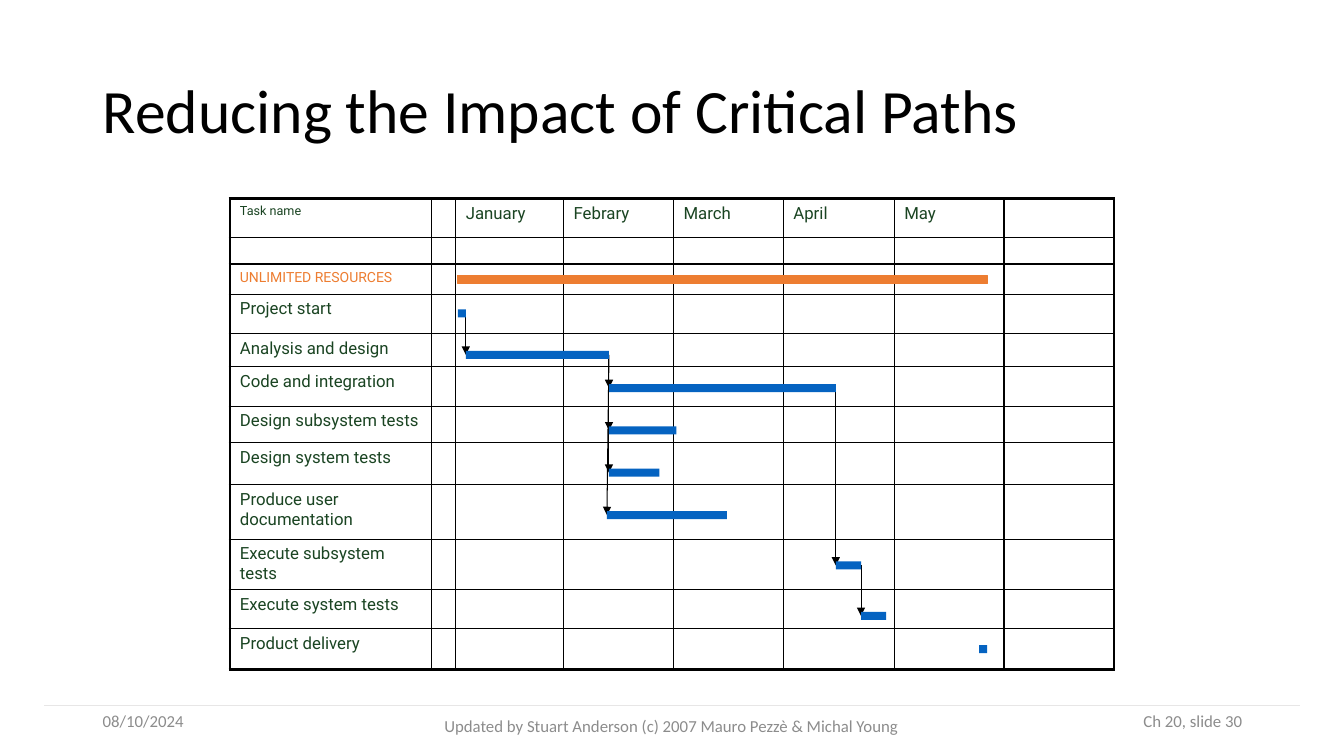
from lxml.etree import SubElement
from pptx import Presentation
from pptx.dml.color import RGBColor
from pptx.enum.shapes import MSO_CONNECTOR, MSO_SHAPE
from pptx.enum.text import MSO_ANCHOR, PP_ALIGN
from pptx.oxml.ns import qn
from pptx.util import Inches, Pt

BLACK, GREEN, ORANGE, BLUE = "000000", "1A4422", "ED7D31", "0563C1"
GREY, PALE = "8C8C8C", "E7E6E6"

TITLE = "Reducing the Impact of Critical Paths"
FOOTERS = [  # text, left, top, width, alignment
    ("08/10/2024", 0.92, 6.95, 1.97, PP_ALIGN.LEFT),
    ("Updated by Stuart Anderson (c) 2007 Mauro Pezzè & Michal Young", 4.16, 7, 5, PP_ALIGN.CENTER),
    ("Ch 20, slide 30", 10.29, 6.95, 2.13, PP_ALIGN.RIGHT),
]
HEADINGS = ["Task name", "", "January", "Febrary", "March", "April", "May", ""]
COLUMN_WIDTHS = [2, 0.24, 1.07, 1.09, 1.09, 1.1, 1.09, 1.09]
HEADER_HEIGHTS = [0.39, 0.26]
TASKS = [  # name, row height, bar start, bar end, bar middle
    ("UNLIMITED RESOURCES", 0.3, 4.54, 9.79, 2.77),
    ("Project start", 0.39, 4.54, 4.62, 3.11),
    ("Analysis and design", 0.33, 4.62, 6.04, 3.52),
    ("Code and integration", 0.39, 6.04, 8.29, 3.85),
    ("Design subsystem tests", 0.36, 6.04, 6.71, 4.27),
    ("Design system tests", 0.42, 6.04, 6.54, 4.69),
    ("Produce user documentation", 0.54, 6.02, 7.21, 5.11),
    ("Execute subsystem tests", 0.49, 8.29, 8.54, 5.61),
    ("Execute system tests", 0.39, 8.54, 8.79, 6.11),
    ("Product delivery", 0.4, 9.71, 9.79, 6.44),
]
SUMMARY = TASKS[0][0]
DEPENDENCIES = [
    ("Project start", "Analysis and design"),
    ("Analysis and design", "Code and integration"),
    ("Analysis and design", "Design subsystem tests"),
    ("Analysis and design", "Design system tests"),
    ("Analysis and design", "Produce user documentation"),
    ("Code and integration", "Execute subsystem tests"),
    ("Execute subsystem tests", "Execute system tests"),
]
TABLE_LEFT, TABLE_TOP = 2.28, 1.97
BAR_HEIGHT = 0.08


def rgb(color):
    return RGBColor.from_string(color)


def set_font(para, name, size, color):
    para.font.name = name
    para.font.size = Pt(size)
    para.font.color.rgb = rgb(color)


def add_line(page, start, end, color, arrow=False):
    line = page.shapes.add_connector(MSO_CONNECTOR.STRAIGHT, *map(Inches, start + end))
    line.line.color.rgb = rgb(color)
    line.line.width = Pt(0.75)
    if arrow:
        SubElement(line.line._get_or_add_ln(), qn("a:tailEnd"), type="triangle")
    SubElement(line._element.spPr, qn("a:effectLst"))


def add_title(page):
    title = page.shapes.title
    title.left, title.top, title.width, title.height = map(Inches, (0.92, 0.4, 11.5, 1.45))
    title.text_frame.text = TITLE
    title.text_frame.vertical_anchor = MSO_ANCHOR.MIDDLE
    para = title.text_frame.paragraphs[0]
    para.alignment = PP_ALIGN.LEFT
    para.line_spacing = 0.9
    set_font(para, "Calibri", 44, BLACK)


def add_footers(page):
    add_line(page, (0.44, 7), (12.89, 7), PALE)
    for text, left, top, width, alignment in FOOTERS:
        box = page.shapes.add_textbox(*map(Inches, (left, top, width, 0.4)))
        box.text_frame.word_wrap = True
        box.text_frame.vertical_anchor = MSO_ANCHOR.MIDDLE
        para = box.text_frame.paragraphs[0]
        para.text = text
        para.alignment = alignment
        set_font(para, "Calibri", 12, GREY)


def set_borders(cell, outer_sides):
    for side in "LRTB":
        width = Pt(2.25 if side in outer_sides else 1)
        border = SubElement(cell._tc.get_or_add_tcPr(), qn(f"a:ln{side}"), w=str(width))
        SubElement(SubElement(border, qn("a:solidFill")), qn("a:srgbClr"), val=BLACK)


def add_task_table(page):
    blanks = [""] * (len(HEADINGS) - 1)
    rows = [HEADINGS, ["", *blanks]] + [[task[0], *blanks] for task in TASKS]
    heights = HEADER_HEIGHTS + [task[1] for task in TASKS]
    last_row, last_column = len(rows) - 1, len(HEADINGS) - 1
    table = page.shapes.add_table(
        len(rows), len(HEADINGS), Inches(TABLE_LEFT), Inches(TABLE_TOP),
        Inches(sum(COLUMN_WIDTHS)), Inches(sum(heights))).table
    table.first_row = table.horz_banding = False
    for column, width in zip(table.columns, COLUMN_WIDTHS):
        column.width = Inches(width)
    special_sizes = {"": 6, "Task name": 9, SUMMARY: 10}
    for i, texts in enumerate(rows):
        table.rows[i].height = Inches(heights[i])
        for j, text in enumerate(texts):
            cell = table.cell(i, j)
            edges = {"T": i == 0, "B": i == last_row, "L": j == 0, "R": j == last_column}
            set_borders(cell, [side for side, outer in edges.items() if outer])
            cell.fill.background()
            para = cell.text_frame.paragraphs[0]
            para.text = text
            color = ORANGE if text == SUMMARY else GREEN
            set_font(para, "Roboto", special_sizes.get(text, 12), color)
            if not text:
                # An empty cell takes its line height from the paragraph end mark
                SubElement(para._p, qn("a:endParaRPr"), sz="600")


def add_schedule(page):
    spans = {name: (start, end, middle) for name, _, start, end, middle in TASKS}
    for before, after in DEPENDENCIES:
        _, end, from_middle = spans[before]
        start, _, to_middle = spans[after]
        add_line(page, (end, from_middle), (start, to_middle), BLACK, arrow=True)
    for name, (start, end, middle) in spans.items():
        bar = page.shapes.add_shape(MSO_SHAPE.RECTANGLE, *map(
            Inches, (start, middle - BAR_HEIGHT / 2, end - start, BAR_HEIGHT)))
        bar.shadow.inherit = False
        bar.fill.solid()
        bar.fill.fore_color.rgb = rgb(ORANGE if name == SUMMARY else BLUE)
        if name == SUMMARY:
            bar.line.color.rgb = rgb(ORANGE)
            bar.line.width = Pt(0.75)
        else:
            bar.line.fill.background()


def main():
    deck = Presentation()
    deck.slide_width, deck.slide_height = Inches(13.33), Inches(7.5)
    page = deck.slides.add_slide(deck.slide_layouts[5])
    add_title(page)
    add_footers(page)
    add_task_table(page)
    add_schedule(page)
    deck.save("out.pptx")


if __name__ == "__main__":
    main()
